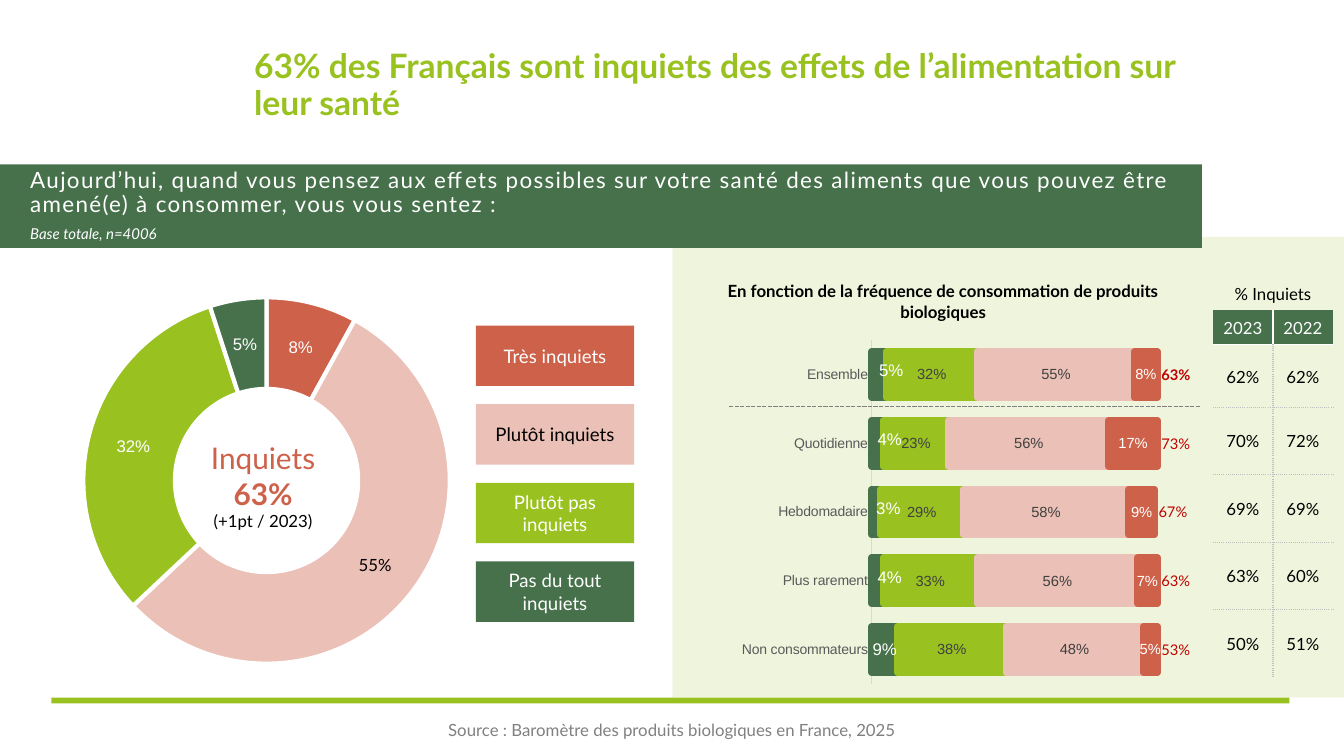
from lxml.etree import SubElement
from pptx import Presentation
from pptx.chart.data import CategoryChartData
from pptx.dml.color import RGBColor
from pptx.enum.chart import XL_CHART_TYPE as ChartType, XL_LABEL_POSITION as LabelPosition, XL_TICK_MARK as TickMark
from pptx.enum.dml import MSO_LINE
from pptx.enum.shapes import MSO_CONNECTOR, MSO_SHAPE
from pptx.enum.text import MSO_ANCHOR, PP_ALIGN
from pptx.oxml.ns import qn
from pptx.util import Inches, Pt

RED, PINK, LIME, GREEN = "CE6149", "EBC0B6", "99C221", "46714B"
WHITE, BLACK, DARK, GREY, BORDER = "FFFFFF", "000000", "404040", "808080", "BFBFBF"

TITLE = "63% des Français sont inquiets des effets de l’alimentation sur leur santé"
QUESTION = ("Aujourd’hui, quand vous pensez aux effets possibles sur votre santé des aliments "
            "que vous pouvez être amené(e) à consommer, vous vous sentez :")
BASE = "Base totale, n=4006"
SOURCE = "Source : Baromètre des produits biologiques en France, 2025"
BAR_TITLE = "En fonction de la fréquence de consommation de produits biologiques"
RING_CENTRE = [("Inquiets", 21.3, RED, False), ("63%", 21.3, RED, True),
               ("(+1pt / 2023)", 12, BLACK, False)]

ANSWERS = [("Très inquiets", 0.08, RED, WHITE), ("Plutôt inquiets", 0.55, PINK, BLACK),
           ("Plutôt pas inquiets", 0.32, LIME, WHITE), ("Pas du tout inquiets", 0.05, GREEN, WHITE)]

FREQUENCIES = ["Ensemble", "Quotidienne", "Hebdomadaire", "Plus rarement", "Non consommateurs"]
BAR_SERIES = [
    ("Pas du tout inquiets", [0.05, 0.04, 0.03, 0.04, 0.09], GREEN, 12, WHITE, LabelPosition.CENTER),
    ("Plutôt pas inquiets", [0.32, 0.23, 0.29, 0.33, 0.38], LIME, 10.5, DARK, LabelPosition.CENTER),
    ("Plutôt inquiets", [0.55, 0.56, 0.58, 0.56, 0.48], PINK, 10.5, DARK, LabelPosition.CENTER),
    ("Très inquiets", [0.08, 0.17, 0.09, 0.07, 0.05], RED, 10.5, WHITE, LabelPosition.CENTER),
    ("Inquiets", [0.63, 0.73, 0.67, 0.63, 0.53], None, 10.5, "C00000", LabelPosition.INSIDE_BASE),
]
TABLE_ROWS = [("% Inquiets", ""), ("2023", "2022"), ("62%", "62%"), ("70%", "72%"),
              ("69%", "69%"), ("63%", "60%"), ("50%", "51%")]
ROW_HEIGHTS = [0.34, 0.34, 0.62] + [0.67] * 4

presentation = Presentation()
presentation.slide_width, presentation.slide_height = Inches(13.33), Inches(7.5)
slide = presentation.slides.add_slide(presentation.slide_layouts[6])
shapes = slide.shapes


def color(value):
    return RGBColor.from_string(value)


def style(font, size, tint, name="Lato", bold=False, italic=False):
    font.size, font.name, font.bold, font.italic = Pt(size), name, bold, italic
    font.color.rgb = color(tint)


def box(left, top, width, height):
    return [Inches(value) for value in (left, top, width, height)]


def write(frame, lines, align=PP_ALIGN.LEFT, anchor=MSO_ANCHOR.MIDDLE, margins=(0, 0), spacing=None):
    frame.word_wrap, frame.vertical_anchor = True, anchor
    frame.margin_left = frame.margin_right = Inches(margins[0])
    frame.margin_top = frame.margin_bottom = Inches(margins[1])
    for index, (text, size, tint, bold) in enumerate(lines):
        paragraph = frame.add_paragraph() if index else frame.paragraphs[0]
        paragraph.alignment, paragraph.line_spacing = align, spacing
        run = paragraph.add_run()
        run.text = text
        style(run.font, size, tint, bold=bold)
    return run


def add_text(place, lines, **options):
    return write(shapes.add_textbox(*box(*place)).text_frame, lines, **options)


def add_panel(place, fill):
    shape = shapes.add_shape(MSO_SHAPE.RECTANGLE, *box(*place))
    shape.shadow.inherit = False
    shape.fill.solid()
    shape.fill.fore_color.rgb = color(fill)
    shape.line.fill.background()
    return shape


def set_layout(parent, position, sizes):
    for old in parent.findall(qn("c:layout")):
        parent.remove(old)
    layout = SubElement(parent, qn("c:layout"))
    parent.insert(position, layout)
    manual = SubElement(layout, qn("c:manualLayout"))
    for tag, value in sizes:
        SubElement(manual, qn("c:" + tag)).set("val", str(value))


def add_chart(kind, place, categories, series, plot_area):
    data = CategoryChartData(number_format="0%")
    data.categories = categories
    for name, values in series:
        data.add_series(name, values)
    chart = shapes.add_chart(kind, *box(*place), data).chart
    chart.has_title = chart.has_legend = False
    style(chart.font, 10, BLACK, "Arial")
    sizes = [("layoutTarget", "inner"), ("xMode", "edge"), ("yMode", "edge")]
    set_layout(chart._chartSpace.chart.plotArea, 0, sizes + list(zip("xywh", plot_area)))
    chart.plots[0].vary_by_categories = kind == ChartType.DOUGHNUT
    return chart


def label_series(series, size, tint):
    labels = series.data_labels
    labels.show_value = True
    labels.number_format, labels.number_format_is_linked = "0%", False
    style(labels.font, size, tint, "Arial")
    return labels


def add_border(cell, side, tint, dash):
    properties = cell._tc.get_or_add_tcPr()
    line = SubElement(properties, qn("a:ln" + side), w=str(Pt(1)))
    SubElement(SubElement(line, qn("a:solidFill")), qn("a:srgbClr")).set("val", tint)
    SubElement(line, qn("a:prstDash")).set("val", dash)


tint_panel = add_panel((6.67, 2.35, 6.66, 4.57), LIME)
SubElement(tint_panel._element.spPr.find(".//" + qn("a:srgbClr")), qn("a:alpha")).set("val", "15000")
add_panel((0, 1.63, 11.92, 0.83), GREEN)
add_panel((0.51, 6.92, 12.28, 0.06), LIME)
add_text((3.85, 6.97, 5.63, 0.54), [(SOURCE, 12, GREY, False)], align=PP_ALIGN.CENTER, margins=(0.13, 0.07))
question = add_text((0.3, 1.63, 11.62, 0.58), [(QUESTION, 16, WHITE, False)], spacing=0.9)
question._r.get_or_add_rPr().set("spc", "100")
add_text((0.3, 2.23, 11.62, 0.2), [(BASE, 10.7, WHITE, False)], spacing=0.9).font.italic = True
add_text((2.52, 0.38, 9.4, 0.95), [(TITLE, 24, LIME, True)], spacing=0.9)

names, shares, fills, inks = zip(*ANSWERS)
ring = add_chart(ChartType.DOUGHNUT, (0.3, 2.51, 6.12, 4.58), names, [("Part", shares)],
                 (0.086, 0.096, 0.594, 0.794))
ring_series = ring.plots[0].series[0]
label_series(ring_series, 12, WHITE)
for index, fill in enumerate(fills):
    point = ring_series.points[index]
    point.format.fill.solid()
    point.format.fill.fore_color.rgb = color(fill)
    point.format.line.color.rgb = color(WHITE)
    point.format.line.width = Pt(3)
style(ring_series.points[1].data_label.font, 12, BLACK)
add_text((1.86, 3.75, 1.5, 2.13), RING_CENTRE, align=PP_ALIGN.CENTER, margins=(0.1, 0.05))

for index, (name, fill, ink) in enumerate(zip(names, fills, inks)):
    key = add_panel((4.72, 3.23 + 0.78 * index, 1.57, 0.6), fill)
    write(key.text_frame, [(name, 13.3, ink, False)], align=PP_ALIGN.CENTER, margins=(0.1, 0.05))

bars = add_chart(ChartType.BAR_STACKED, (6.67, 3.37, 6.12, 3.42), FREQUENCIES,
                 [row[:2] for row in BAR_SERIES], (0.323, 0, 0.648, 1))
bars.plots[0].gap_width, bars.plots[0].overlap = 50, 100
category_axis, value_axis = bars.category_axis, bars.value_axis
category_axis.reverse_order = True
category_axis.major_tick_mark = category_axis.minor_tick_mark = TickMark.NONE
category_axis.format.line.color.rgb = color("D9D9D9")
style(category_axis.tick_labels.font, 10, "595959", "Arial")
value_axis.minimum_scale, value_axis.maximum_scale = 0, 1.4
value_axis.has_major_gridlines = value_axis.visible = False
for series, (name, values, fill, size, ink, position) in zip(bars.plots[0].series, BAR_SERIES):
    label_series(series, size, ink).position = position
    if fill:
        series.format.fill.solid()
        series.format.fill.fore_color.rgb = color(fill)
        series.format.line.color.rgb = color(fill)
        series.format.line.width = Pt(5)
    else:
        series.format.fill.background()
        series.format.line.fill.background()
        for index in range(len(values)):
            label = series.points[index].data_label
            style(label.font, size, ink, bold=index == 0)
            label.position = position

narrow_series = bars.plots[0].series[0]
for index in range(4):
    label = narrow_series.points[index].data_label
    style(label.font, 12, WHITE, "Arial")
    label.position = LabelPosition.CENTER
for label_element in narrow_series._element.findall(".//" + qn("c:dLbl")):
    set_layout(label_element, 1, [("x", 0.02), ("y", -0.01)])

add_text((6.82, 2.74, 5.07, 0.5), [(BAR_TITLE, 12, BLACK, True)], align=PP_ALIGN.CENTER,
         anchor=MSO_ANCHOR.TOP, margins=(0.1, 0.05))
divider = shapes.add_connector(MSO_CONNECTOR.STRAIGHT, *box(7.23, 4.03, 11.9, 4.03))
divider.line.color.rgb, divider.line.width = color(GREY), Pt(1)
divider.line.dash_style = MSO_LINE.SQUARE_DOT
SubElement(divider._element.spPr, qn("a:effectLst"))

table = shapes.add_table(len(TABLE_ROWS), 2, *box(12.03, 2.74, 1.19, sum(ROW_HEIGHTS))).table
table.first_row = table.horz_banding = False
table._tbl.tblPr.find(qn("a:tableStyleId")).text = "{2D5ABB26-0587-4C30-8999-92F81FD0307C}"
table.cell(0, 0).merge(table.cell(0, 1))
for row, (texts, height) in enumerate(zip(TABLE_ROWS, ROW_HEIGHTS)):
    table.rows[row].height = Inches(height)
    for column, text in enumerate(texts):
        cell = table.cell(row, column)
        header = row == 1
        cell.vertical_anchor = MSO_ANCHOR.MIDDLE
        cell.margin_left = cell.margin_right = cell.margin_top = Inches(0.01)
        cell.margin_bottom = 0
        if row:
            line = (WHITE, "solid") if header else (BORDER, "sysDot")
            add_border(cell, "L" if column else "R", *line)
            if row > 1:
                add_border(cell, "T", *((WHITE, "solid") if row == 2 else line))
            if row < len(TABLE_ROWS) - 1:
                add_border(cell, "B", *line)
        if header:
            cell.fill.solid()
            cell.fill.fore_color.rgb = color(GREEN)
        else:
            cell.fill.background()
        if text:
            paragraph = cell.text_frame.paragraphs[0]
            paragraph.alignment = PP_ALIGN.CENTER
            run = paragraph.add_run()
            run.text = text
            style(run.font, 12, WHITE if header else BLACK)

presentation.save("out.pptx")
